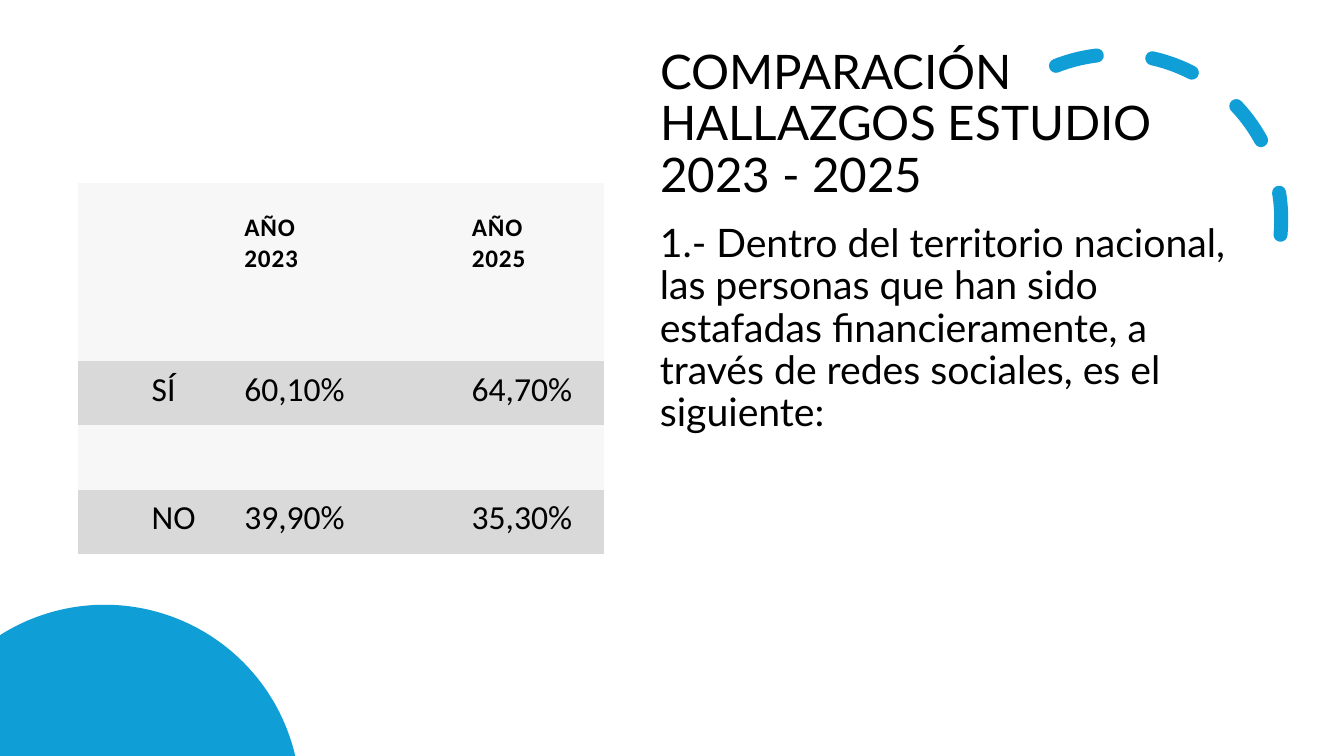
from dataclasses import dataclass
from math import acos, asin, cos, sin

from pptx import Presentation
from pptx.dml.color import RGBColor
from pptx.enum.dml import MSO_LINE
from pptx.enum.shapes import MSO_SHAPE
from pptx.enum.text import MSO_ANCHOR as Anchor, MSO_AUTO_SIZE, PP_ALIGN as Align
from pptx.oxml.ns import qn
from pptx.slide import Slide
from pptx.text.text import TextFrame
from pptx.util import Cm, Pt

COLORS = {"accent": "0F9ED5", "text": "000000", "light": "F7F7F7", "dark": "D9D9D9"}
SLIDE_WIDTH, SLIDE_HEIGHT = 33.87, 19.05
NO_GRID_STYLE = "{2D5ABB26-0587-4C30-8999-92F81FD0307C}"
COLUMN_WIDTHS = (1.81, 1.81, 3.16, 0.76, 1.81, 3.16, 0.76)
ROW_HEIGHTS = (2.86, 1.62, 1.62, 1.62, 1.62)
LABEL_COLUMN = 1
ROW_FILLS = ("light", "light", "dark", "light", "dark")


@dataclass(frozen=True)
class Box:
    """Left, top, width and height in centimetres."""
    left: float
    top: float
    width: float
    height: float

    def lengths(self) -> tuple[Cm, Cm, Cm, Cm]:
        return Cm(self.left), Cm(self.top), Cm(self.width), Cm(self.height)


@dataclass(frozen=True)
class Year:
    heading: str
    column: int


@dataclass(frozen=True)
class Answer:
    label: str
    row: int
    shares: tuple[str, str]


YEARS = (Year("AÑO 2023", 2), Year("AÑO 2025", 5))
ANSWERS = (
    Answer("SÍ", 2, ("60,10%", "64,70%")),
    Answer("NO", 4, ("39,90%", "35,30%")),
)
TITLE_BOX = Box(16.38, 1.32, 15.16, 3.68)
FINDING_BOX = Box(16.38, 5.51, 15.16, 11.63)
TABLE_BOX = Box(1.96, 4.62, sum(COLUMN_WIDTHS), sum(ROW_HEIGHTS))
ARC_BOX = Box(23.98, 1.37, 8.31, 8.31)


def rgb(name: str) -> RGBColor:
    return RGBColor.from_string(COLORS[name])


def write(frame: TextFrame, text: str, *, size: float, font: str = "Lato",
          bold: bool = False, align: Align = Align.LEFT, line_spacing: float | None = None,
          space_before: float = 0, letter_spacing: float = 0) -> None:
    paragraph = frame.paragraphs[0]
    paragraph.alignment = align
    paragraph.line_spacing = line_spacing
    paragraph.space_before = Pt(space_before)
    run = paragraph.add_run()
    run.text = text
    run.font.size, run.font.name, run.font.bold = Pt(size), font, bold
    run.font.color.rgb = rgb("text")
    if letter_spacing:
        run._r.get_or_add_rPr().set("spc", str(round(letter_spacing * 100)))


def add_title(slide: Slide) -> None:
    title = slide.shapes.title
    title.left, title.top, title.width, title.height = TITLE_BOX.lengths()
    frame = title.text_frame
    frame.word_wrap, frame.auto_size = True, MSO_AUTO_SIZE.NONE
    frame.vertical_anchor = Anchor.MIDDLE
    write(frame, "COMPARACIÓN HALLAZGOS ESTUDIO 2023 - 2025", size=34, line_spacing=0.9)


def add_finding(slide: Slide) -> None:
    frame = slide.shapes.add_textbox(*FINDING_BOX.lengths()).text_frame
    frame.word_wrap = True
    write(frame, "1.- Dentro del territorio nacional, las personas que han sido estafadas "
          "financieramente, a través de redes sociales, es el siguiente:",
          size=28, line_spacing=0.9, space_before=10)


def add_dashed_arc(slide: Slide) -> None:
    arc = slide.shapes.add_shape(MSO_SHAPE.ARC, *ARC_BOX.lengths())
    arc.shadow.inherit = False
    arc.adjustments[0], arc.adjustments[1] = 144.42, 0
    arc.rotation = 66.1
    arc.fill.background()
    arc.line.color.rgb = rgb("accent")
    arc.line.width = Pt(10)
    arc.line.dash_style = MSO_LINE.DASH
    properties = arc._element.spPr
    properties.find(qn("a:xfrm")).set("flipH", "1")
    properties.find(qn("a:ln")).set("cap", "rnd")


def add_corner_dome(slide: Slide) -> None:
    """Draw the part of a circle that lies within the bottom left corner."""
    center_x, center_y, radius, steps = 2.64, 20.17, 4.93, 90
    start = acos(-center_x / radius)
    end = asin((center_y - SLIDE_HEIGHT) / radius)
    angles = [start + (end - start) * step / steps for step in range(steps + 1)]
    rim = [(Cm(center_x + radius * cos(angle)), Cm(center_y - radius * sin(angle)))
           for angle in angles]
    builder = slide.shapes.build_freeform(Cm(0), Cm(SLIDE_HEIGHT))
    builder.add_line_segments(rim, close=True)
    dome = builder.convert_to_shape()
    dome.shadow.inherit = False
    dome.fill.solid()
    dome.fill.fore_color.rgb = rgb("accent")
    dome.line.fill.background()


def add_comparison_table(slide: Slide) -> None:
    graphic = slide.shapes.add_table(len(ROW_HEIGHTS), len(COLUMN_WIDTHS), *TABLE_BOX.lengths())
    table = graphic.table
    table.first_row = table.horz_banding = False
    next(graphic._element.iter(qn("a:tableStyleId"))).text = NO_GRID_STYLE
    for column, width in zip(table.columns, COLUMN_WIDTHS):
        column.width = Cm(width)
    for row, height, fill in zip(table.rows, ROW_HEIGHTS, ROW_FILLS):
        row.height = Cm(height)
        for cell in row.cells:
            cell.fill.solid()
            cell.fill.fore_color.rgb = rgb(fill)

    def fill_cell(row: int, column: int, text: str, side: float, bottom: float,
                  **text_format) -> None:
        cell = table.cell(row, column)
        cell.margin_left = cell.margin_top = cell.margin_right = Cm(side)
        cell.margin_bottom = Cm(bottom)
        cell.vertical_anchor = Anchor.BOTTOM
        write(cell.text_frame, text, font="Calibri", **text_format)

    for year in YEARS:
        table.cell(0, year.column).merge(table.cell(0, year.column + 1))
        fill_cell(0, year.column, year.heading, 0.58, 0.58,
                  size=18, bold=True, letter_spacing=0.6)
    for answer in ANSWERS:
        fill_cell(answer.row, LABEL_COLUMN, answer.label, 0.05, 0.38, size=24)
        for year, share in zip(YEARS, answer.shares):
            fill_cell(answer.row, year.column, share, 0.05, 0.38, size=24, align=Align.RIGHT)


def main() -> None:
    presentation = Presentation()
    presentation.slide_width, presentation.slide_height = Cm(SLIDE_WIDTH), Cm(SLIDE_HEIGHT)
    slide = presentation.slides.add_slide(presentation.slide_layouts.get_by_name("Title Only"))
    add_dashed_arc(slide)
    add_title(slide)
    add_corner_dome(slide)
    add_finding(slide)
    add_comparison_table(slide)
    presentation.save("out.pptx")


if __name__ == "__main__":
    main()
